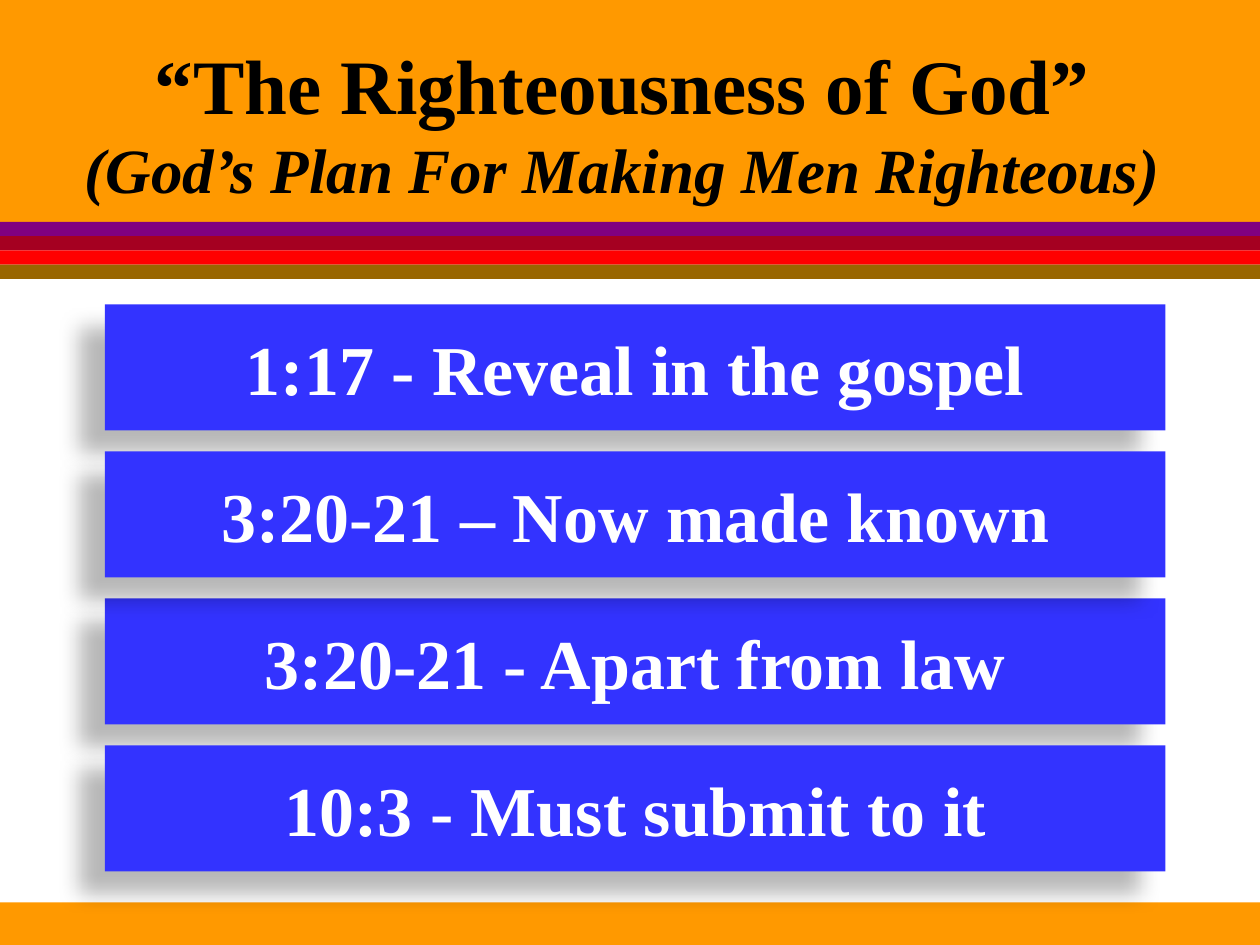
"""Builds a slide listing four points about the righteousness of God."""
import lxml.etree
import pptx
import pptx.dml.color
import pptx.enum.shapes
import pptx.enum.text
import pptx.oxml.ns
import pptx.util

Pt = pptx.util.Pt
WIDTH, HEIGHT = 720, 540
ORANGE = "FF9900"
STRIPE_COLORS = ["800080", "A50021", "FF0000", "996600"]
STRIPE_TOP, STRIPE_HEIGHT = 126.8, 8.15
BAR_TOP, BAR_STEP = 174, 84
BARS_BACK_TO_FRONT = [
    (0, "1:17 - Reveal in the gospel"),
    (2, "3:20-21 - Apart from law"),
    (3, "10:3 - Must submit to it"),
    (1, "3:20-21 – Now made known"),
]


def color(value):
    return pptx.dml.color.RGBColor.from_string(value)


class SlideBuilder:
    font_name = "Times New Roman"

    def __init__(self, presentation):
        self.slide = presentation.slides.add_slide(presentation.slide_layouts[6])

    def background(self, fill):
        self.slide.background.fill.solid()
        self.slide.background.fill.fore_color.rgb = color(fill)

    def band(self, left, top, width, height, fill):
        shape = self.slide.shapes.add_shape(
            pptx.enum.shapes.MSO_SHAPE.RECTANGLE, Pt(left), Pt(top), Pt(width), Pt(height))
        shape.shadow.inherit = False
        shape.fill.solid()
        shape.fill.fore_color.rgb = color(fill)
        shape.line.fill.background()
        return shape

    def set_text(self, paragraph, text, size, text_color, italic=False):
        paragraph.text = text
        paragraph.alignment = pptx.enum.text.PP_ALIGN.CENTER
        font = paragraph.font
        font.name, font.size = self.font_name, Pt(size)
        font.bold, font.italic = True, italic
        font.color.rgb = color(text_color)

    def title(self, left, top, width, height, heading, subheading):
        box = self.slide.shapes.add_textbox(Pt(left), Pt(top), Pt(width), Pt(height))
        frame = box.text_frame
        frame.word_wrap = False
        frame.auto_size = pptx.enum.text.MSO_AUTO_SIZE.SHAPE_TO_FIT_TEXT
        self.set_text(frame.paragraphs[0], heading, 44, "000000")
        self.set_text(frame.add_paragraph(), subheading, 36, "000000", italic=True)

    def shadow(self, shape):
        qn = pptx.oxml.ns.qn
        effects = shape._element.spPr.find(qn("a:effectLst"))
        outer = lxml.etree.SubElement(
            effects, qn("a:outerShdw"), blurRad=str(Pt(11.8)), dist=str(Pt(19.7)),
            dir=str(141 * 60000), algn="ctr", rotWithShape="0")
        black = lxml.etree.SubElement(outer, qn("a:srgbClr"), val="000000")
        lxml.etree.SubElement(black, qn("a:alpha"), val="28000")

    def bar(self, left, top, width, height, text):
        shape = self.band(left, top, width, height, "3333FF")
        self.shadow(shape)
        frame = shape.text_frame
        frame.word_wrap = False
        frame.vertical_anchor = pptx.enum.text.MSO_ANCHOR.MIDDLE
        self.set_text(frame.paragraphs[0], text, 40, "FFFFFF")


def main():
    presentation = pptx.Presentation()
    presentation.slide_width, presentation.slide_height = Pt(WIDTH), Pt(HEIGHT)
    builder = SlideBuilder(presentation)
    builder.background("969696")
    builder.band(0, 108, WIDTH, 432, "FFFFFF")
    builder.band(0, 515.6, WIDTH, 24.4, ORANGE)
    builder.band(0, 0, WIDTH, STRIPE_TOP, ORANGE)
    for index, fill in enumerate(STRIPE_COLORS):
        builder.band(0, STRIPE_TOP + index * STRIPE_HEIGHT, WIDTH, STRIPE_HEIGHT, fill)
    builder.title(40, 18, 631.4, 103, "“The Righteousness of God”",
                  "(God’s Plan For Making Men Righteous)")
    for row, text in BARS_BACK_TO_FRONT:
        builder.bar(60, BAR_TOP + row * BAR_STEP, 606, 72, text)
    presentation.save("out.pptx")


if __name__ == "__main__":
    main()
